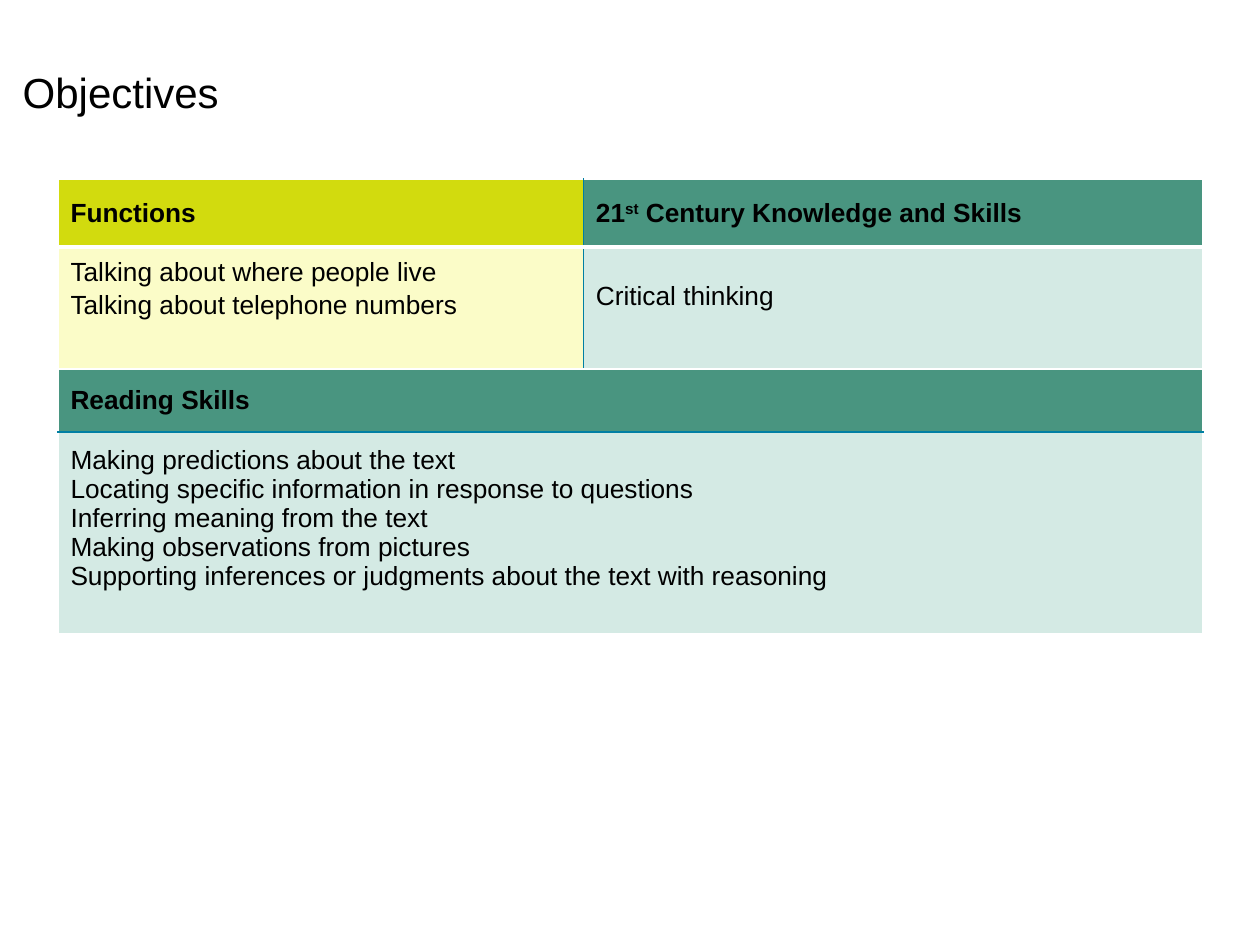
import pptx
import pptx.util
import pptx.dml.color
import pptx.enum.text
import pptx.oxml.ns
from lxml import etree

Inches = pptx.util.Inches
Pt = pptx.util.Pt
RGBColor = pptx.dml.color.RGBColor
ANCHOR = pptx.enum.text.MSO_ANCHOR

BLACK = RGBColor(0x00, 0x00, 0x00)
WHITE = RGBColor(0xFF, 0xFF, 0xFF)
LIME = RGBColor(0xD2, 0xDB, 0x0E)
PALE_LIME = RGBColor(0xFB, 0xFC, 0xC8)
GREEN = RGBColor(0x49, 0x95, 0x80)
PALE_GREEN = RGBColor(0xD4, 0xEA, 0xE4)
TEAL = RGBColor(0x00, 0x7F, 0xA3)

FONT = "Arial"
COLUMN_WIDTHS = (4.17, 4.92)
ROW_HEIGHTS = (0.54, 0.97, 0.5, 1.6)

READING_SKILLS = (
    "Making predictions about the text",
    "Locating specific information in response to questions",
    "Inferring meaning from the text",
    "Making observations from pictures",
    "Supporting inferences or judgments about the text with reasoning",
)


def add_run(paragraph, text, size=15, bold=False):
    run = paragraph.add_run()
    run.text = text
    run.font.name = FONT
    run.font.size = Pt(size)
    run.font.bold = bold
    run.font.color.rgb = BLACK
    return run


def set_borders(cell, **special):
    """Draw white 1 pt edges, except those given as side=(colour, points)."""
    properties = cell._tc.get_or_add_tcPr()
    for side in "LRTB":
        color, width = special.get(side, (WHITE, 1))
        line = etree.SubElement(properties, pptx.oxml.ns.qn(f"a:ln{side}"), w=str(Pt(width)))
        fill = etree.SubElement(line, pptx.oxml.ns.qn("a:solidFill"))
        etree.SubElement(fill, pptx.oxml.ns.qn("a:srgbClr"), val=str(color))


def style_cell(cell, color, anchor=ANCHOR.MIDDLE, **borders):
    set_borders(cell, **borders)
    cell.fill.solid()
    cell.fill.fore_color.rgb = color
    cell.vertical_anchor = anchor
    return cell.text_frame.paragraphs[0]


def place_title(slide, left, top, width, height):
    title = slide.shapes.title
    title.left, title.top, title.width, title.height = left, top, width, height
    frame = title.text_frame
    frame.word_wrap = False
    frame.vertical_anchor = ANCHOR.MIDDLE
    heading = frame.paragraphs[0]
    heading.alignment = pptx.enum.text.PP_ALIGN.LEFT
    add_run(heading, "Objectives", size=24)


def add_objectives(slide, left, top, width, height):
    table = slide.shapes.add_table(4, 2, left, top, width, height).table
    table.first_row = table.horz_banding = False
    for column, column_width in zip(table.columns, COLUMN_WIDTHS):
        column.width = Inches(column_width)
    for row, row_height in zip(table.rows, ROW_HEIGHTS):
        row.height = Inches(row_height)
    for row in (2, 3):
        table.cell(row, 0).merge(table.cell(row, 1))

    divider, header_rule = (TEAL, 1), (WHITE, 3)

    # Functions
    header = style_cell(table.cell(0, 0), LIME, R=divider, B=header_rule)
    add_run(header, "Functions", bold=True)
    functions = style_cell(table.cell(1, 0), PALE_LIME, ANCHOR.TOP, R=divider, T=header_rule)
    functions.line_spacing = 1.15
    add_run(functions, "Talking about where people live")
    functions.add_line_break()
    add_run(functions, "Talking about telephone numbers")

    # Knowledge and skills
    header = style_cell(table.cell(0, 1), GREEN, L=divider, B=header_rule)
    add_run(header, "21", bold=True)
    ordinal = add_run(header, "st", bold=True)
    ordinal._r.get_or_add_rPr().set("baseline", "30000")
    add_run(header, " Century Knowledge and Skills", bold=True)
    knowledge_cell = table.cell(1, 1)
    knowledge_cell.margin_top = Inches(0.28)
    knowledge = style_cell(knowledge_cell, PALE_GREEN, ANCHOR.TOP, L=divider, T=header_rule)
    add_run(knowledge, "Critical thinking")

    # Reading skills, across both columns
    header = style_cell(table.cell(2, 0), GREEN, B=divider)
    add_run(header, "Reading Skills", bold=True)
    skills_cell = table.cell(3, 0)
    skills_cell.margin_bottom = Inches(0.28)
    skill = style_cell(skills_cell, PALE_GREEN, T=divider)
    add_run(skill, READING_SKILLS[0])
    for text in READING_SKILLS[1:]:
        add_run(skills_cell.text_frame.add_paragraph(), text)


def main():
    presentation = pptx.Presentation()
    presentation.slide_width = Inches(10)
    presentation.slide_height = Inches(7.5)
    slide = presentation.slides.add_slide(presentation.slide_layouts[5])
    place_title(slide, Inches(0.08), Inches(0.48), Inches(1.77), Inches(0.5))
    add_objectives(slide, Inches(0.46), Inches(1.42),
                   Inches(sum(COLUMN_WIDTHS)), Inches(sum(ROW_HEIGHTS)))
    presentation.save("out.pptx")


if __name__ == "__main__":
    main()
